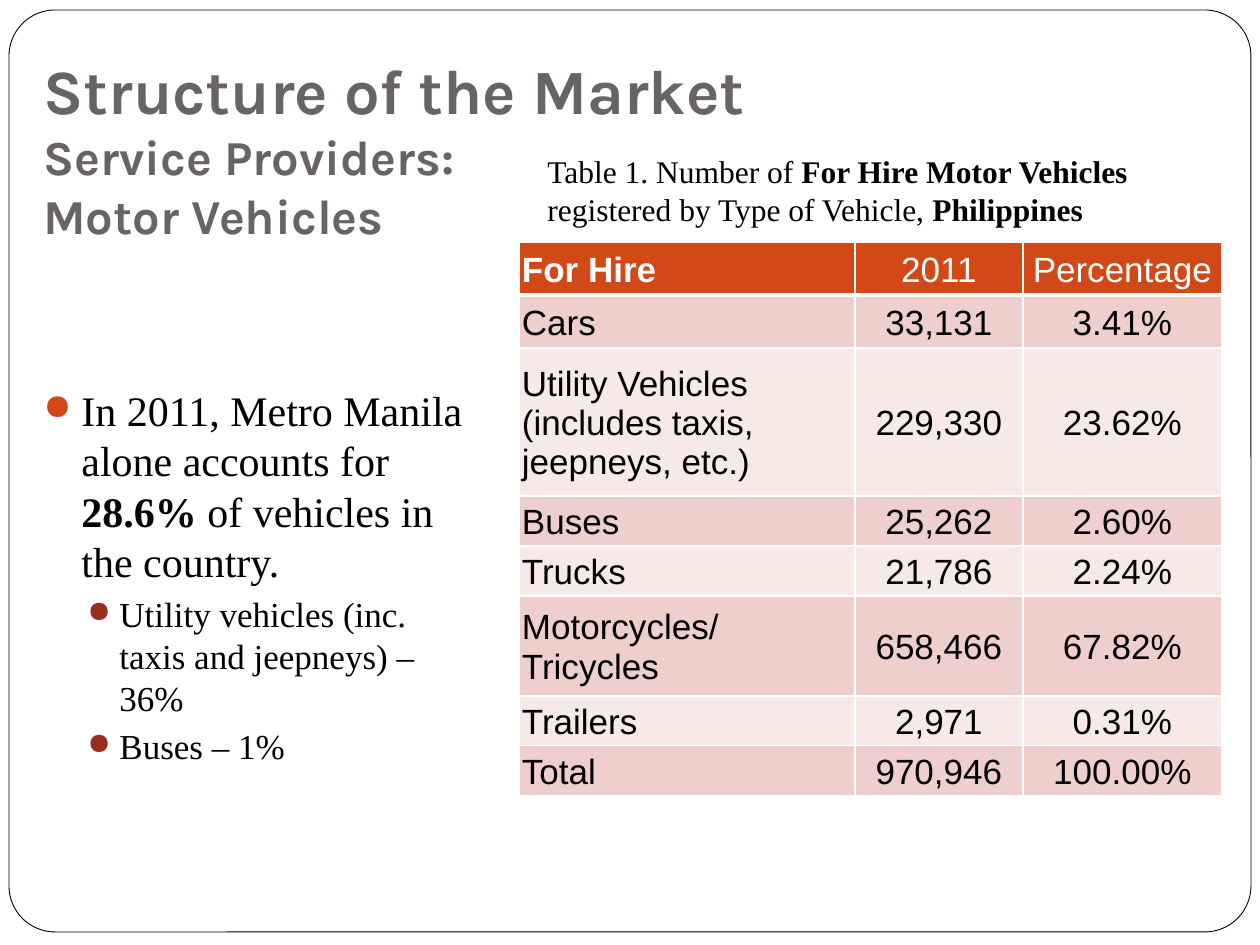
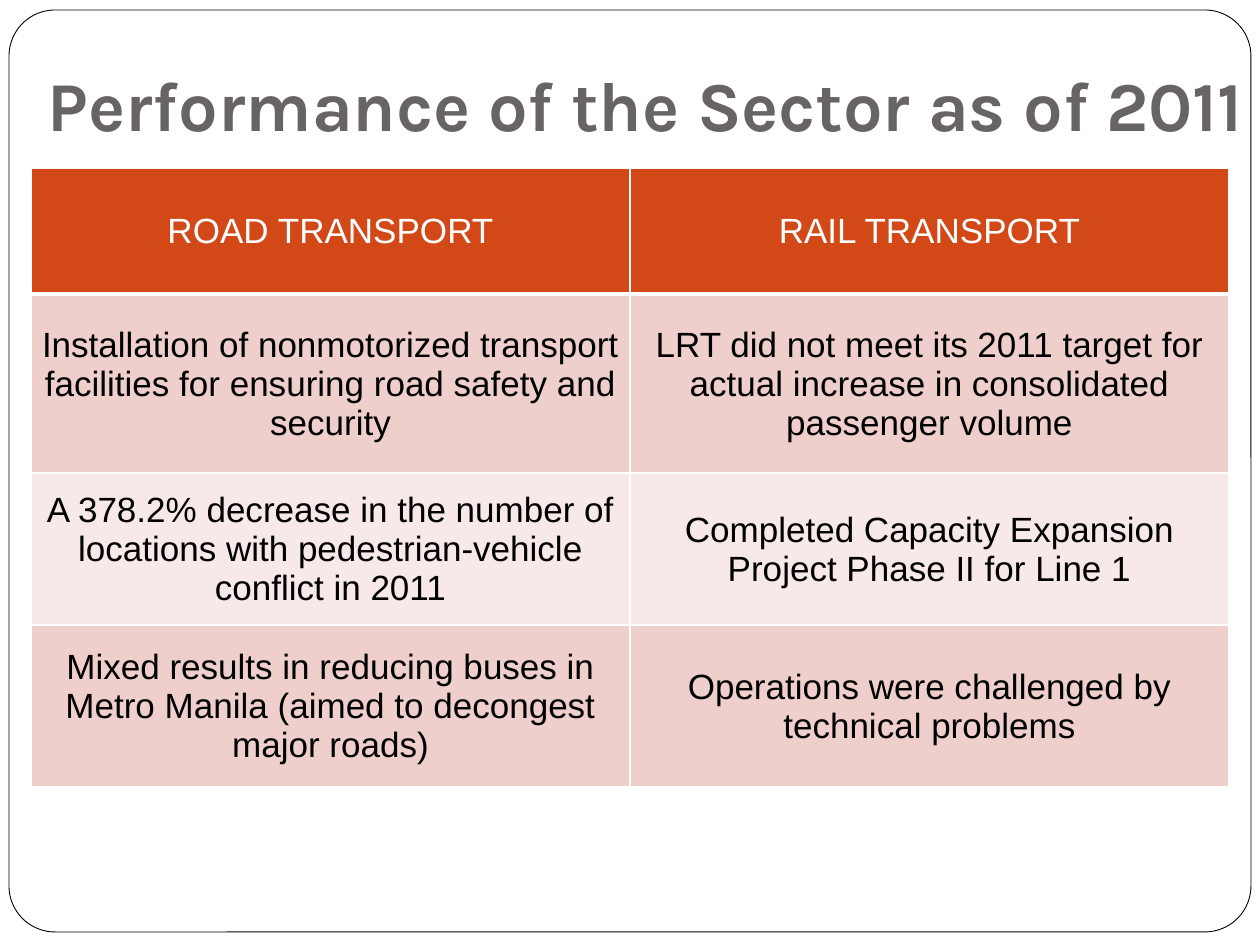
from pptx import Presentation
from pptx.dml.color import RGBColor
from pptx.enum.shapes import MSO_SHAPE
from pptx.enum.text import MSO_ANCHOR, PP_ALIGN
from pptx.oxml import parse_xml
from pptx.oxml.ns import nsdecls
from pptx.util import Pt

SCALE = 914400 / 126  # EMU in one px
WIDTH, HEIGHT = 1260, 945

WHITE = RGBColor(0xFF, 0xFF, 0xFF)
BLACK = RGBColor(0, 0, 0)
GREY = RGBColor(0x69, 0x64, 0x64)
ORANGE = RGBColor(0xD3, 0x48, 0x17)
RUST = RGBColor(0x9B, 0x2D, 0x1F)
ROSE = RGBColor(0xEF, 0xCF, 0xCC)
BLUSH = RGBColor(0xF7, 0xE9, 0xE8)

HEAD = "Karla"
BODY = "Times New Roman"
GRID = "Arial"

LEFT, CENTER = PP_ALIGN.LEFT, PP_ALIGN.CENTER

VEHICLES = [
    ("**For Hire**", "2011", "Percentage"),
    ("Cars", "33,131", "3.41%"),
    ("Utility Vehicles\n(includes taxis, jeepneys, etc.)", "229,330", "23.62%"),
    ("Buses", "25,262", "2.60%"),
    ("Trucks", "21,786", "2.24%"),
    ("Motorcycles/ Tricycles", "658,466", "67.82%"),
    ("Trailers", "2,971", "0.31%"),
    ("Total", "970,946", "100.00%"),
]
RESULTS = [
    ("ROAD TRANSPORT", "RAIL TRANSPORT"),
    ("Installation of nonmotorized transport facilities for ensuring "
     "road safety and security",
     "LRT did not meet its 2011 target for actual increase in "
     "consolidated passenger volume"),
    ("A 378.2% decrease in the number of locations with "
     "pedestrian-vehicle conflict in 2011",
     "Completed Capacity Expansion Project Phase II for Line 1"),
    ("Mixed results in reducing buses in Metro Manila (aimed to "
     "decongest major roads)",
     "Operations were challenged by technical problems"),
]


def px(n):
    return round(n * SCALE)


def write(frame, text, size=20, font=BODY, color=BLACK, bold=False,
          align=LEFT, before=0):
    """Add one paragraph per line; parts between ** are bold."""
    for line in text.split("\n"):
        para = frame.paragraphs[-1]
        if para.runs:
            para = frame.add_paragraph()
        para.alignment = align
        para.space_before = Pt(before)
        for i, part in enumerate(line.split("**")):
            if part:
                run = para.add_run()
                run.text = part
                run.font.size = Pt(size)
                run.font.name = font
                run.font.bold = bold or i % 2 == 1
                run.font.color.rgb = color
    return para


def add_box(slide, x, y, w, h, anchor=MSO_ANCHOR.TOP):
    box = slide.shapes.add_textbox(px(x), px(y), px(w), px(h))
    frame = box.text_frame
    frame.word_wrap = True
    frame.vertical_anchor = anchor
    return frame


def add_title(slide, x, y, w, h):
    frame = add_box(slide, x, y, w, h, MSO_ANCHOR.BOTTOM)
    frame.margin_bottom = px(13)
    return frame


def add_frame(slide):
    """Draw the rounded outline that every slide has."""
    shape = slide.shapes.add_shape(
        MSO_SHAPE.ROUNDED_RECTANGLE, px(9), px(10), px(1242), px(922))
    shape.adjustments[0] = 0.05
    shape.shadow.inherit = False
    shape.fill.solid()
    shape.fill.fore_color.rgb = WHITE
    shape.line.color.rgb = BLACK
    shape.line.width = Pt(0.5)


def add_slide(deck):
    slide = deck.slides.add_slide(deck.slide_layouts[6])
    add_frame(slide)
    return slide


def add_bullet(frame, text, color, indent, hang, **form):
    para = write(frame, text, **form)
    props = para._p.get_or_add_pPr()
    props.set("marL", str(px(indent)))
    props.set("indent", str(-px(hang)))
    for tag in (f'<a:buClr {nsdecls("a")}><a:srgbClr val="{color}"/></a:buClr>',
                f'<a:buSzPct {nsdecls("a")} val="85000"/>',
                f'<a:buChar {nsdecls("a")} char="●"/>'):
        props.append(parse_xml(tag))


def set_edges(cell, base):
    """Give a cell white borders, the bottom one base points wide."""
    props = cell._tc.get_or_add_tcPr()
    for i, side in enumerate("LRTB"):
        wide = Pt(base if side == "B" else 1)
        props.insert(i, parse_xml(
            f'<a:ln{side} {nsdecls("a")} w="{wide}"><a:solidFill>'
            f'<a:srgbClr val="{WHITE}"/></a:solidFill></a:ln{side}>'))


def add_grid(slide, x, y, cols, rows, data, pad, first=CENTER):
    """Add a banded table; first aligns the first column."""
    table = slide.shapes.add_table(
        len(rows), len(cols), px(x), px(y), px(sum(cols)), px(sum(rows))).table
    for col, w in zip(table.columns, cols):
        col.width = px(w)
    for r, (row, h) in enumerate(zip(table.rows, rows)):
        row.height = px(h)
        band = ORANGE if r == 0 else (BLUSH, ROSE)[r % 2]
        for c, cell in enumerate(row.cells):
            cell.fill.solid()
            cell.fill.fore_color.rgb = band
            set_edges(cell, 1 if r else 3)
            cell.vertical_anchor = MSO_ANCHOR.MIDDLE
            cell.margin_left = cell.margin_right = cell.margin_top = px(pad)
            cell.margin_bottom = 0
            write(cell.text_frame, data[r][c], font=GRID,
                  color=BLACK if r else WHITE,
                  align=CENTER if c else first)


def add_market(deck):
    slide = add_slide(deck)
    title = add_title(slide, 31, 78, 882, 179)
    style = dict(font=HEAD, color=GREY, bold=True)
    write(title, "Structure of the Market", size=36, **style)
    write(title, "Service Providers:\nMotor Vehicles", size=27.9, **style)

    notes = add_box(slide, 31, 378, 462, 535)
    add_bullet(notes, "In 2011, Metro Manila alone accounts for **28.6% **"
               "of vehicles in the country.", ORANGE, 38, 38,
               size=24, before=5.8)
    for text in ("Utility vehicles (inc. taxis and jeepneys) – 36%",
                 "Buses – 1%"):
        add_bullet(notes, text, RUST, 76, 32, before=3.7)

    add_grid(slide, 519, 242, [336, 168, 199],
             [53, 53, 148, 50, 50, 100, 50, 50], VEHICLES, 3, first=LEFT)
    label = add_box(slide, 535, 146, 672, 127)
    write(label, "Table 1. Number of **For Hire Motor Vehicles **"
          "registered by Type of Vehicle, **Philippines**", size=18)


def add_sector(deck):
    slide = add_slide(deck)
    title = add_title(slide, 31, 0, 1229, 158)
    write(title, "Performance of the Sector as of 2011", size=40,
          font=HEAD, color=GREY, bold=True, align=CENTER)
    add_grid(slide, 31, 168, [599, 599], [126, 179, 152, 162], RESULTS, 1)


def main():
    deck = Presentation()
    deck.slide_width, deck.slide_height = px(WIDTH), px(HEIGHT)
    add_market(deck)
    add_sector(deck)
    deck.save("out.pptx")


if __name__ == "__main__":
    main()
